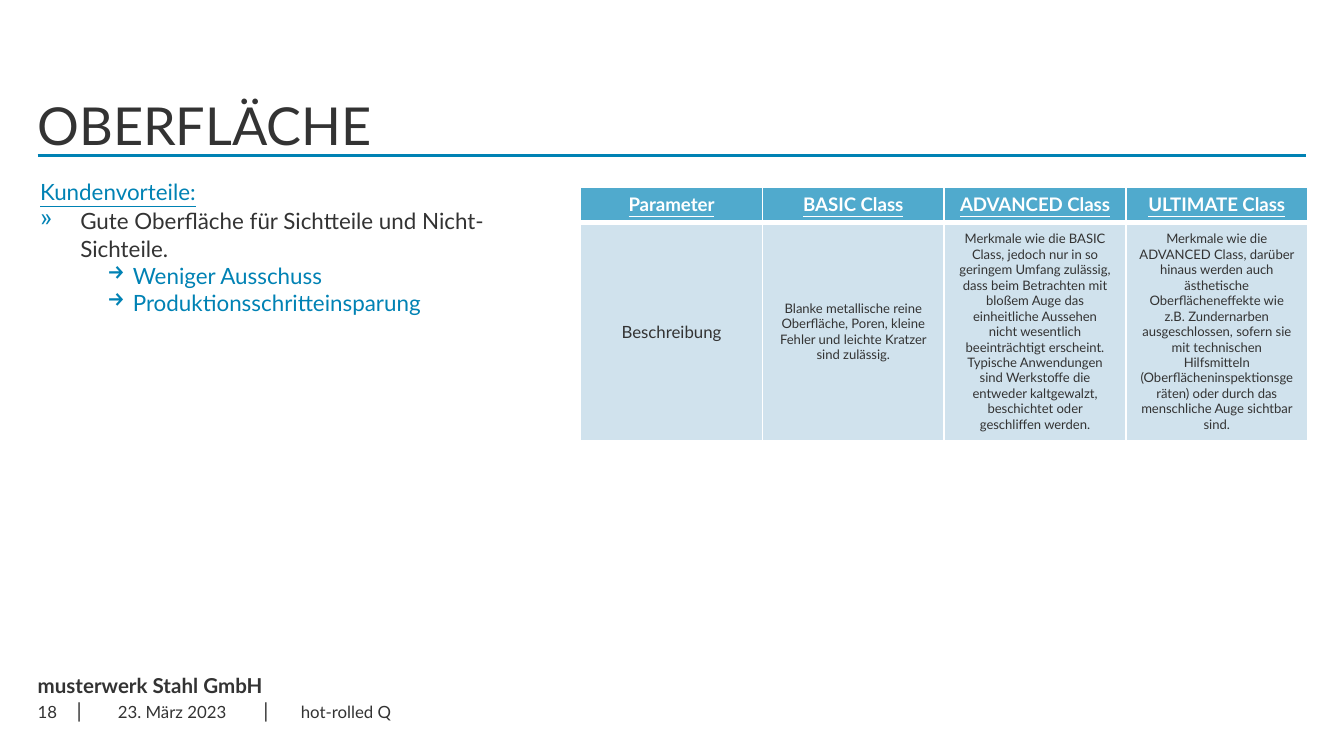
from dataclasses import dataclass

from lxml import etree
from pptx import Presentation
from pptx.dml.color import RGBColor
from pptx.enum import shapes, text
from pptx.oxml import ns
from pptx.util import Inches, Pt


@dataclass(frozen=True)
class Theme:
    font: str = "Lato"
    dark: str = "333333"
    blue: str = "0082B4"
    head: str = "50AACD"
    body: str = "D0E2ED"
    white: str = "FFFFFF"
    title: int = 28
    text: int = 12
    firm: int = 11
    label: int = 10
    small: int = 9
    tiny: int = 7


T = Theme()
MID = text.MSO_ANCHOR.MIDDLE
CENTER = text.PP_ALIGN.CENTER


def add_node(parent, tag, **attrs):
    return etree.SubElement(parent, ns.qn(tag), **attrs)


def style(para, size, color=T.dark, bold=False, under=False, align=None):
    para.alignment = align
    font = para.font
    font.name, font.size = T.font, Pt(size)
    font.bold, font.underline = bold, under
    font.color.rgb = RGBColor.from_string(color)


def add_box(slide, box, inset=(0, 0), anchor=text.MSO_ANCHOR.TOP):
    frame = slide.shapes.add_textbox(*map(Inches, box)).text_frame
    frame.word_wrap = True
    frame.vertical_anchor = anchor
    frame.margin_left = frame.margin_right = Inches(inset[0])
    frame.margin_top = frame.margin_bottom = Inches(inset[1])
    return frame


def add_label(slide, box, words, size, align=None, bold=False, **frame):
    para = add_box(slide, box, **frame).paragraphs[0]
    para.text = words
    style(para, size, bold=bold, align=align)
    return para


def add_title(slide, box, words):
    left, top, width, height = box
    para = add_label(slide, box, words, T.title, anchor=text.MSO_ANCHOR.BOTTOM)
    para.line_spacing = Pt(32)
    base = Inches(top + height)
    rule = slide.shapes.add_connector(
        shapes.MSO_CONNECTOR.STRAIGHT, Inches(left), base, Inches(left + width), base)
    rule.line.color.rgb = RGBColor.from_string(T.blue)
    rule.line.width = Pt(1.5)
    add_node(rule._element.spPr, "a:effectLst")


def add_bullet(para, mark, margin, hang):
    props = para._p.get_or_add_pPr()
    props.set("marL", str(Inches(margin)))
    props.set("indent", str(-Inches(hang)))
    add_node(add_node(props, "a:buClr"), "a:srgbClr", val=T.blue)
    add_node(props, "a:buChar", char=mark)


def add_gains(slide, box, head, point, gains):
    frame = add_box(slide, box, inset=(0.1, 0.05))
    para = frame.paragraphs[0]
    para.text = head
    style(para, T.text, T.blue, under=True)
    para = frame.add_paragraph()
    para.text = point
    add_bullet(para, "»", 0.3, 0.3)
    para.line_spacing = 1.05
    style(para, T.text)
    for gain in gains:
        para = frame.add_paragraph()
        para.text = gain
        para.level = 1
        add_bullet(para, "→", 0.69, 0.19)
        style(para, T.text, T.blue)


def add_border(cell, base):
    props = cell._tc.get_or_add_tcPr()
    for side, width in zip("LRTB", (1, 1, 1, base)):
        line = add_node(props, f"a:ln{side}", w=str(Pt(width)))
        add_node(add_node(line, "a:solidFill"), "a:srgbClr", val=T.white)


def add_grid(slide, box, heights, rows):
    table = slide.shapes.add_table(len(rows), len(rows[0]), *map(Inches, box)).table
    for col in table.columns:
        col.width = Inches(box[2] / len(rows[0]))
    for i, (height, row) in enumerate(zip(heights, rows)):
        table.rows[i].height = Inches(height)
        for j, words in enumerate(row):
            cell = table.cell(i, j)
            cell.text = words
            para = cell.text_frame.paragraphs[0]
            add_border(cell, 1 if i else 3)
            cell.fill.solid()
            cell.fill.fore_color.rgb = RGBColor.from_string(T.body if i else T.head)
            if i:
                cell.vertical_anchor = MID
                style(para, T.tiny if j else T.small, align=CENTER)
            else:
                style(para, T.label, T.white, True, True, CENTER)


def add_footer(slide, box, firm, page, date, topic):
    left, top, width, height = box
    add_label(slide, (left, top, width, 0.19), firm, T.firm, bold=True)
    for shift in (0.29, 1.68):
        add_label(slide, (left + shift, top + 0.18, 0.22, 0.19), "|", T.firm)
    row = top + 0.14
    tall = height - 0.14
    add_label(slide, (left, row, 0.31, tall), page, T.small, anchor=MID)
    for shift, wide, words, align in ((0.31, 1.38, date, CENTER), (1.86, 4.56, topic, None)):
        add_label(slide, (left + shift, row, wide, tall), words, T.small,
                  align, inset=(0.1, 0.05), anchor=MID)


def main():
    deck = Presentation()
    deck.slide_width = Inches(10)
    deck.slide_height = deck.slide_width * 9 // 16
    slide = deck.slides.add_slide(deck.slide_layouts[6])
    add_title(slide, (0.28, 0.19, 9.44, 0.97), "OBERFLÄCHE")
    add_gains(
        slide, (0.2, 1.28, 3.87, 1.13), "Kundenvorteile:",
        "Gute Oberfläche für Sichtteile und Nicht-Sichteile.",
        ("Weniger Ausschuss", "Produktionsschritteinsparung"))
    add_grid(slide, (4.32, 1.39, 5.41, 1.87), (0.25, 1.62), (
        ("Parameter", "BASIC Class", "ADVANCED Class", "ULTIMATE Class"),
        ("Beschreibung",
         "Blanke metallische reine Oberfläche, Poren, kleine Fehler und leichte "
         "Kratzer sind zulässig.",
         "Merkmale wie die BASIC Class, jedoch nur in so geringem Umfang zulässig, "
         "dass beim Betrachten mit bloßem Auge das einheitliche Aussehen nicht "
         "wesentlich beeinträchtigt erscheint. Typische Anwendungen sind Werkstoffe "
         "die entweder kaltgewalzt, beschichtet oder geschliffen werden.",
         "Merkmale wie die ADVANCED Class, darüber hinaus werden auch ästhetische "
         "Oberflächeneffekte wie z.B. Zundernarben ausgeschlossen, sofern sie mit "
         "technischen Hilfsmitteln (Oberflächeninspektionsgeräten) oder durch das "
         "menschliche Auge sichtbar sind.")))
    add_footer(slide, (0.28, 5.01, 6.44, 0.44), "musterwerk Stahl GmbH",
               "18", "23. März 2023", "hot-rolled Q")
    deck.save("out.pptx")


if __name__ == "__main__":
    main()
